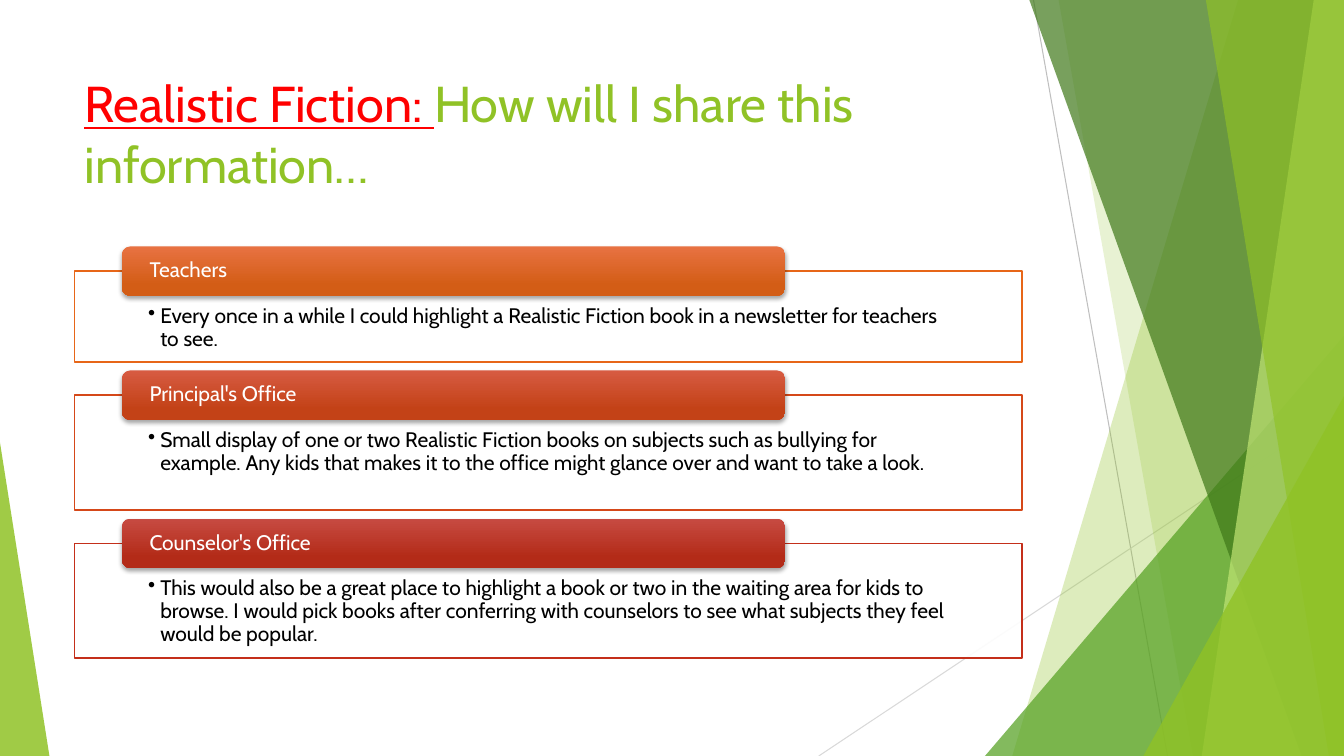
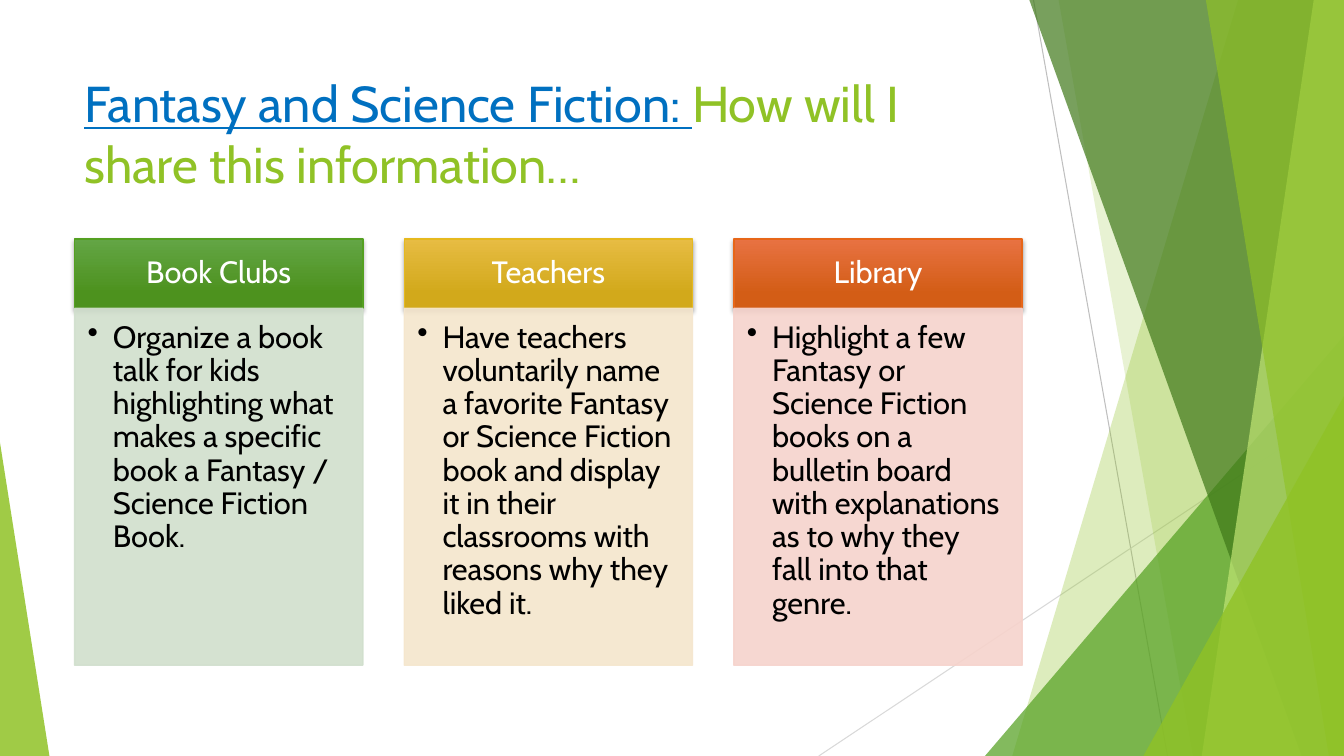
from pptx import Presentation
from pptx.dml.color import RGBColor
from pptx.enum.shapes import MSO_CONNECTOR, MSO_SHAPE
from pptx.enum.text import MSO_ANCHOR, PP_ALIGN
from pptx.oxml.ns import qn
from pptx.util import Inches, Pt
from lxml import etree

RECT = MSO_SHAPE.RECTANGLE
ROUND = MSO_SHAPE.ROUNDED_RECTANGLE
WEDGE = MSO_SHAPE.ISOSCELES_TRIANGLE
STRAIGHT = MSO_CONNECTOR.STRAIGHT
TOP, MIDDLE = MSO_ANCHOR.TOP, MSO_ANCHOR.MIDDLE
LEFT, CENTER = PP_ALIGN.LEFT, PP_ALIGN.CENTER

FONT = "Cabin"
COLORS = {
    "white": "FFFFFF", "black": "000000", "red": "FF0000", "blue": "0070C0",
    "lime": "90C226", "green": "54A021", "moss": "3F7819", "pale": "C0E474",
    "gray": "BFBFBF", "mist": "D9D9D9",
    "gold": "E6B91E", "orange": "E76618", "rust": "D54819", "brick": "C42F1A",
    "mint": "D1DFCD", "cream": "F5E6CD", "pink": "F6D3CC",
}
# Top and bottom shade of each header
SHADES = {
    "green": ("63A545", "4D921E"), "gold": ("E7BC43", "D2A91B"),
    "orange": ("E87242", "D35D16"), "rust": ("D75B42", "C34217"),
    "brick": ("C74B42", "B32B18"),
}

# The slide is a grid of 100 columns by 100 rows
WIDTH, HEIGHT = Inches(13.33), Inches(7.5)
EDGE, SPAN = 5.55, 70.5

QUERY = "How will I share this information…"
ROWS = [  # header, colour, height, text
    ("Teachers", "orange", 12,
     "Every once in a while I could highlight a Realistic Fiction book in a "
     "newsletter for teachers to see."),
    ("Principal's Office", "rust", 15.2,
     "Small display of one or two Realistic Fiction books on subjects such as "
     "bullying for example. Any kids that makes it to the office might glance "
     "over and want to take a look."),
    ("Counselor's Office", "brick", 15.2,
     "This would also be a great place to highlight a book or two in the "
     "waiting area for kids to browse. I would pick books after conferring "
     "with counselors to see what subjects they feel would be popular."),
]
CARDS = [  # header, colour, body colour, text
    ("Book Clubs", "green", "mint",
     "Organize a book talk for kids highlighting what makes a specific book a "
     "Fantasy / Science Fiction Book."),
    ("Teachers", "gold", "cream",
     "Have teachers voluntarily name a favorite Fantasy or Science Fiction "
     "book and display it in their classrooms with reasons why they liked it."),
    ("Library", "orange", "pink",
     "Highlight a few Fantasy or Science Fiction books on a bulletin board "
     "with explanations as to why they fall into that genre."),
]


def col(n):
    return round(WIDTH * n / 100)


def row(n):
    return round(HEIGHT * n / 100)


def tint(name):
    return RGBColor.from_string(COLORS[name])


def fade(part, share):
    """Make every colour inside an XML part partly clear."""
    for color in part.iter(qn("a:srgbClr")):
        etree.SubElement(color, qn("a:alpha"), val=str(share * 1000))


def outline(shape, color):
    if color:
        shape.line.color.rgb = tint(color)
        shape.line.width = Pt(1)
    else:
        shape.line.fill.background()


def fill(shape, color, line=None):
    shape.shadow.inherit = False
    shape.fill.solid()
    shape.fill.fore_color.rgb = tint(color)
    outline(shape, line)


def block(slide, kind, x, y, w, h):
    return slide.shapes.add_shape(kind, col(x), row(y), col(w), row(h))


# Text
def frame(shape, pads, anchor=TOP, align=LEFT):
    text = shape.text_frame
    text.word_wrap = True
    text.vertical_anchor = anchor
    (text.margin_left, text.margin_top,
     text.margin_right, text.margin_bottom) = map(Inches, pads)
    para = text.paragraphs[0]
    para.alignment = align
    return para


def write(para, words, size, color, under=False):
    run = para.add_run()
    run.text = words
    run.font.name = FONT
    run.font.size = Pt(size)
    run.font.color.rgb = tint(color)
    run.font.underline = under


def bullet(para, indent):
    props = para._p.get_or_add_pPr()
    props.set("marL", str(Inches(indent)))
    props.set("indent", str(-Inches(indent)))
    etree.SubElement(props, qn("a:buChar"), char="•")


def header(slide, kind, place, words, color, size, pads, align=LEFT, line=None):
    """Shaded bar with a soft shadow and white text."""
    bar = block(slide, kind, *place)
    bar.fill.gradient()
    bar.fill.gradient_angle = 270
    for stop, shade, spot in zip(bar.fill.gradient_stops, SHADES[color], (0, 0.78)):
        stop.color.rgb = RGBColor.from_string(shade)
        stop.position = spot
    outline(bar, line)
    bar.shadow.inherit = False
    glow = etree.SubElement(
        bar.element.spPr.find(qn("a:effectLst")), qn("a:outerShdw"),
        blurRad=str(Pt(3)), dist=str(Pt(2)), dir="5400000", rotWithShape="0")
    etree.SubElement(glow, qn("a:srgbClr"), val=COLORS["black"])
    fade(glow, 35)
    para = frame(bar, pads, MIDDLE, align)
    para.line_spacing = 0.9
    write(para, words, size, "white")


def body(box, words, size, pads, indent):
    para = frame(box, pads)
    para.line_spacing = 0.9
    bullet(para, indent)
    write(para, words, size, "black")


# Backdrop
def thread(slide, x1, y1, x2, y2, color):
    line = slide.shapes.add_connector(STRAIGHT, col(x1), row(y1), col(x2), row(y2))
    line.line.color.rgb = tint(color)
    line.line.width = Pt(0.75)
    etree.SubElement(line._element.spPr, qn("a:effectLst"))


def pane(slide, top, base, color, share):
    """Clear sheet from a slanted left side to the slide's right edge."""
    pen = slide.shapes.build_freeform(col(top), 0)
    pen.add_line_segments([(WIDTH, 0), (WIDTH, HEIGHT), (col(base), HEIGHT)])
    sheet = pen.convert_to_shape()
    fill(sheet, color)
    fade(sheet.element.spPr, share)


def wedge(slide, x, y, w, tip, color, share):
    """Right triangle that stands on the slide's lower edge."""
    shape = block(slide, WEDGE, x, y, w, 100 - y)
    shape.adjustments[0] = tip
    fill(shape, color)
    fade(shape.element.spPr, share)


def backdrop(slide):
    thread(slide, 76.9, 0, 86.87, 100, "gray")
    thread(slide, 100, 53.73, 60.92, 100, "mist")
    pane(slide, 92.12, 75.32, "lime", 30)
    pane(slide, 78.77, 88.75, "lime", 20)
    wedge(slide, 73.29, 44.4, 26.71, 1, "green", 72)
    pane(slide, 76.59, 96.85, "moss", 70)
    pane(slide, 97.75, 89.42, "pale", 70)
    pane(slide, 89.72, 98.87, "lime", 65)
    wedge(slide, 85.07, 52.4, 14.93, 1, "lime", 80)
    wedge(slide, 0, 58.53, 3.68, 0, "lime", 85)


def start(deck, genre, color):
    """New slide with the shared backdrop and a two-colour title."""
    slide = deck.slides.add_slide(deck.slide_layouts[6])
    backdrop(slide)
    box = slide.shapes.add_textbox(col(EDGE), row(8.93), col(SPAN), row(19.2))
    para = frame(box, (0.1, 0.05, 0.1, 0.05))
    write(para, genre + ": ", 36, color, True)
    write(para, QUERY, 36, "lime")
    return slide


# Content
def stack(slide):
    y, gap, lift = 35.87, 4.4, 3.27
    for head, color, tall, words in ROWS:
        box = block(slide, RECT, EDGE, y, SPAN, tall)
        fill(box, "white", color)
        fade(box.element.spPr.find(qn("a:solidFill")), 90)
        body(box, words, 15, (0.73, 0.34, 0.73, 0.12), 0.12)
        place = (EDGE + SPAN * 0.05, y - lift, SPAN * 0.7, 2 * lift)
        header(slide, ROUND, place, head, color, 15, (0.25, 0, 0.25, 0))
        y += tall + gap


def cards(slide):
    top, cap, tall, wide = 31.6, 9.2, 47.2, 21.45
    step = (SPAN - wide) / (len(CARDS) - 1)
    for i, (head, color, back, words) in enumerate(CARDS):
        x = EDGE + i * step
        header(slide, RECT, (x, top, wide, cap), head, color, 22,
               (0.17, 0.1, 0.17, 0.1), CENTER, color)
        box = block(slide, RECT, x, top + cap, wide, tall)
        fill(box, back, back)
        fade(box.element.spPr, 90)
        body(box, words, 22, (0.13, 0.13, 0.17, 0.19), 0.25)


def main():
    deck = Presentation()
    deck.slide_width, deck.slide_height = WIDTH, HEIGHT
    stack(start(deck, "Realistic Fiction", "red"))
    cards(start(deck, "Fantasy and Science Fiction", "blue"))
    deck.save("out.pptx")


if __name__ == "__main__":
    main()
